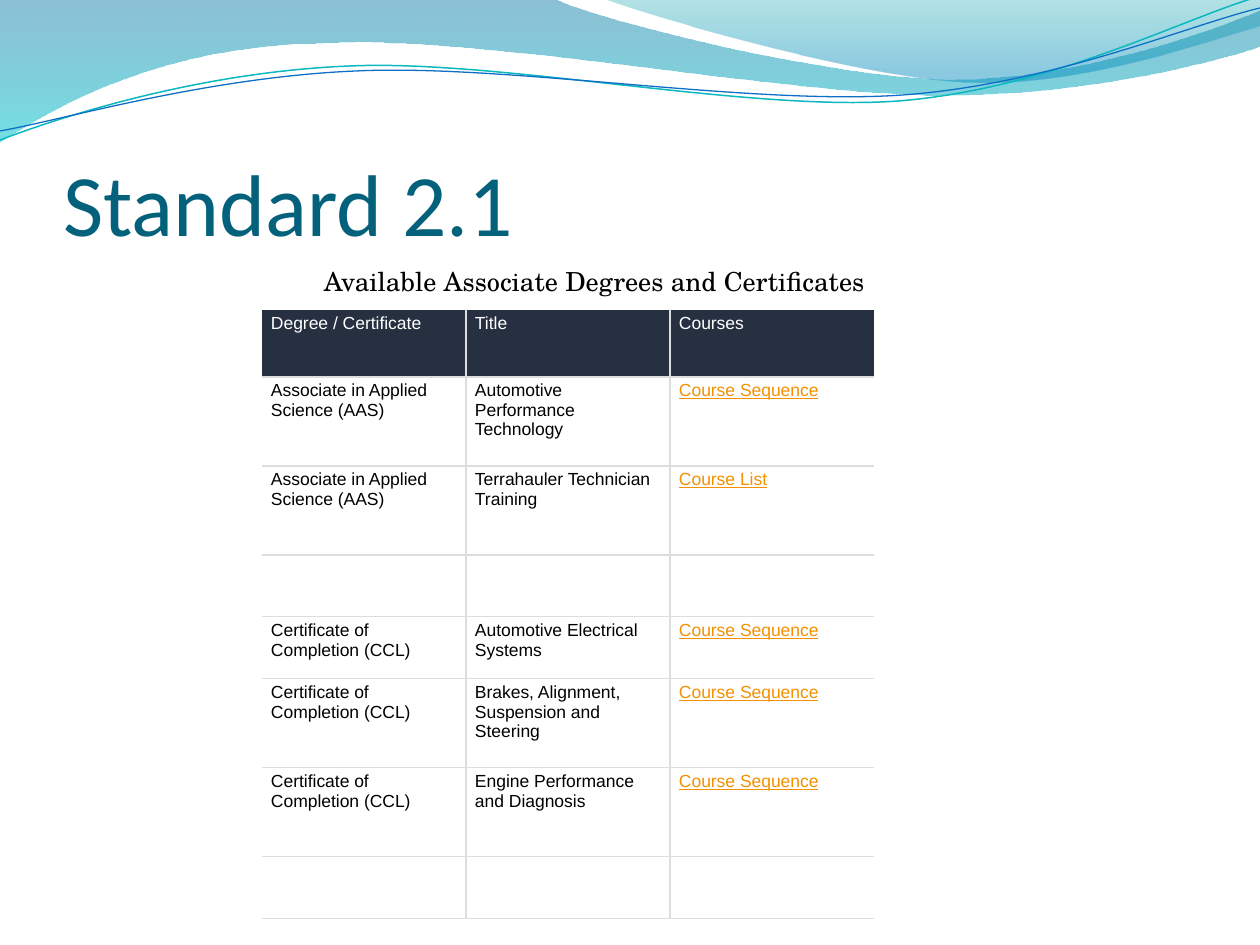
from lxml import etree
from pptx import Presentation
from pptx.dml.color import RGBColor
from pptx.enum.shapes import MSO_SHAPE
from pptx.enum.text import MSO_ANCHOR, PP_ALIGN
from pptx.oxml.ns import qn
from pptx.util import Pt

RECTANGLE = MSO_SHAPE.RECTANGLE
MIDDLE, BOTTOM = MSO_ANCHOR.MIDDLE, MSO_ANCHOR.BOTTOM
LEFT = PP_ALIGN.LEFT

SCALE = 914400 / 126
SLIDE_SIZE = (1260, 945)
FIRST_WAVE_ID = 101

THEME = {
    "title": {"name": "Calibri", "size": 50, "color": "04617B"},
    "caption": {"name": "TeX Gyre Schola", "size": 15, "color": "000000"},
    "header": {"name": "Arial", "size": 10, "color": "FFFFFF"},
    "body": {"name": "Arial", "size": 10, "color": "000000"},
    "course": {"name": "Arial", "size": 10, "color": "F49100", "underline": True},
    "header_fill": "263041",
    "paper": "FFFFFF",
    "rule": "DDDDDD",
    "rule_width": 0.75,
}

TITLE = "Standard 2.1"
CAPTION = "Available Associate Degrees and Certificates"
AAS = "Associate in Applied Science (AAS)"
CCL = "Certificate of Completion (CCL)"
SEQUENCE = "Course Sequence"
DEGREES = [
    ("Degree / Certificate", "Title", "Courses"),
    (AAS, "Automotive Performance Technology", SEQUENCE),
    (AAS, "Terrahauler Technician Training", "Course List"),
    ("", "", ""),
    (CCL, "Automotive Electrical Systems", SEQUENCE),
    (CCL, "Brakes, Alignment, Suspension and Steering", SEQUENCE),
    (CCL, "Engine Performance and Diagnosis", SEQUENCE),
    ("", "", ""),
]
ROW_HEIGHTS = [67, 89, 89, 62, 62, 89, 89, 62]
COLUMN_WIDTH = 204
TABLE_ORIGIN = (262, 310)
TITLE_BOX = (63, 97, 1134, 157)
CAPTION_BOX = (324, 247, 936, 63)

WAVES = [
    {"start": (-1, -1), "parts": [
        [(554, -1)],
        [(600, 21), (837, 79), (955, 79)],
        [(1075, 79), (1207, 33), (1260, 11)],
        [(1261, 46)],
        [(1239, 55), (1096, 96), (940, 95)],
        [(784, 95), (481, 35), (324, 43)],
        [(163, 45), (58, 105), (-1, 142)]],
     "stops": [(0, "0074A1", 45), (1, "00C6CF", 55)]},
    {"start": (604, -1), "parts": [
        [(641, 14), (859, 78), (969, 82)],
        [(1079, 87), (1211, 40), (1260, 26)],
        [(1260, -1)]],
     "stops": [(0, "00A1A9", 30), (0.8, "008BBF", 45)]},
    {"start": (0, 140), "parts": [
        [(60, 117), (199, 72), (349, 66)],
        [(498, 59), (747, 112), (898, 101)],
        [(1050, 89), (1182, 19), (1257, -3)]],
     "line": ("0AB8BF", 0.85)},
    {"start": (0, 131), "parts": [
        [(59, 121), (207, 77), (357, 71)],
        [(508, 64), (752, 106), (903, 95)],
        [(1053, 84), (1186, 26), (1260, 8)]],
     "line": ("0F6FC6", 0.75)},
]


def px(value):
    return round(value * SCALE)


def rgb(value):
    return RGBColor.from_string(value)


def bend(ribbon, parts):
    segments = iter(list(ribbon._element.spPr.iter(qn("a:lnTo"))))
    for part in parts:
        group = [next(segments) for _ in part]
        if len(group) == 1:
            continue
        curve = etree.Element(qn("a:cubicBezTo"))
        group[0].addprevious(curve)
        for segment in group:
            curve.append(segment[0])
            segment.getparent().remove(segment)


def add_wave(shapes, wave):
    builder = shapes.build_freeform(*wave["start"], scale=SCALE)
    points = [point for part in wave["parts"] for point in part]
    builder.add_line_segments(points, close="stops" in wave)
    ribbon = builder.convert_to_shape()
    bend(ribbon, wave["parts"])
    ribbon.shadow.inherit = False
    if "line" in wave:
        color, width = wave["line"]
        ribbon.fill.background()
        ribbon.line.color.rgb = rgb(color)
        ribbon.line.width = Pt(width)
        return ribbon
    ribbon.line.fill.background()
    ribbon.fill.gradient()
    ribbon.fill.gradient_angle = 270
    for stop, (position, color, _) in zip(ribbon.fill.gradient_stops, wave["stops"]):
        stop.position = position
        stop.color.rgb = rgb(color)
    for tint, (_, _, opacity) in zip(ribbon._element.spPr.iter(qn("a:srgbClr")), wave["stops"]):
        etree.SubElement(tint, qn("a:alpha"), val=str(opacity * 1000))
    return ribbon


def add_backdrop(slide, master):
    for number, wave in enumerate(WAVES):
        element = add_wave(slide.shapes, wave)._element
        element.nvSpPr.cNvPr.set("id", str(FIRST_WAVE_ID + number))
        master.shapes._spTree.insert(2 + number, element)


def place(shape, box):
    for side, value in zip(("left", "top", "width", "height"), box):
        setattr(shape, side, px(value))


def write(frame, text, style, **layout):
    for key, value in layout.items():
        setattr(frame, key, value)
    paragraph = frame.paragraphs[0]
    paragraph.alignment = LEFT
    run = paragraph.add_run()
    run.text = text
    for key, value in style.items():
        if key == "color":
            run.font.color.rgb = rgb(value)
        else:
            setattr(run.font, key, Pt(value) if key == "size" else value)


def rule_cell(cell, sides):
    properties = cell._tc.get_or_add_tcPr()
    for side in "LRTB":
        edge = etree.SubElement(properties, qn(f"a:ln{side}"), w=str(Pt(THEME["rule_width"])))
        if side in sides:
            fill = etree.SubElement(edge, qn("a:solidFill"))
            etree.SubElement(fill, qn("a:srgbClr"), val=THEME["rule"])
        else:
            etree.SubElement(edge, qn("a:noFill"))


def add_degrees(shapes):
    columns = len(DEGREES[0])
    size = (columns * COLUMN_WIDTH, sum(ROW_HEIGHTS))
    table = shapes.add_table(len(DEGREES), columns, *map(px, TABLE_ORIGIN + size)).table
    table.first_row = table.horz_banding = False
    for column in table.columns:
        column.width = px(COLUMN_WIDTH)
    margins = {"margin_left": 9, "margin_right": 9, "margin_top": 4, "margin_bottom": 4}
    for r, entries in enumerate(DEGREES):
        table.rows[r].height = px(ROW_HEIGHTS[r])
        for c, entry in enumerate(entries):
            cell = table.cell(r, c)
            for key, value in margins.items():
                setattr(cell, key, px(value))
            inner = {"L": c > 0, "R": c < columns - 1, "T": r > 0, "B": True}
            rule_cell(cell, [side for side, shown in inner.items() if shown])
            cell.fill.solid()
            cell.fill.fore_color.rgb = rgb(THEME["paper" if r else "header_fill"])
            if entry:
                style = "header" if r == 0 else "course" if c == columns - 1 else "body"
                write(cell.text_frame, entry, THEME[style])


def main():
    deck = Presentation()
    deck.slide_width, deck.slide_height = map(px, SLIDE_SIZE)
    slide = deck.slides.add_slide(deck.slide_layouts[5])
    shapes = slide.shapes

    add_backdrop(slide, deck.slide_master)

    place(shapes.title, TITLE_BOX)
    write(shapes.title.text_frame, TITLE, THEME["title"], vertical_anchor=BOTTOM,
          margin_left=0, margin_right=0, margin_top=px(6), margin_bottom=0)

    add_degrees(shapes)

    caption = shapes.add_shape(RECTANGLE, *map(px, CAPTION_BOX))
    caption.shadow.inherit = False
    caption.fill.solid()
    caption.fill.fore_color.rgb = rgb(THEME["paper"])
    caption.line.fill.background()
    write(caption.text_frame, CAPTION, THEME["caption"], vertical_anchor=MIDDLE, word_wrap=True,
          margin_left=0, margin_right=0, margin_top=px(6), margin_bottom=0)

    deck.save("out.pptx")


if __name__ == "__main__":
    main()
